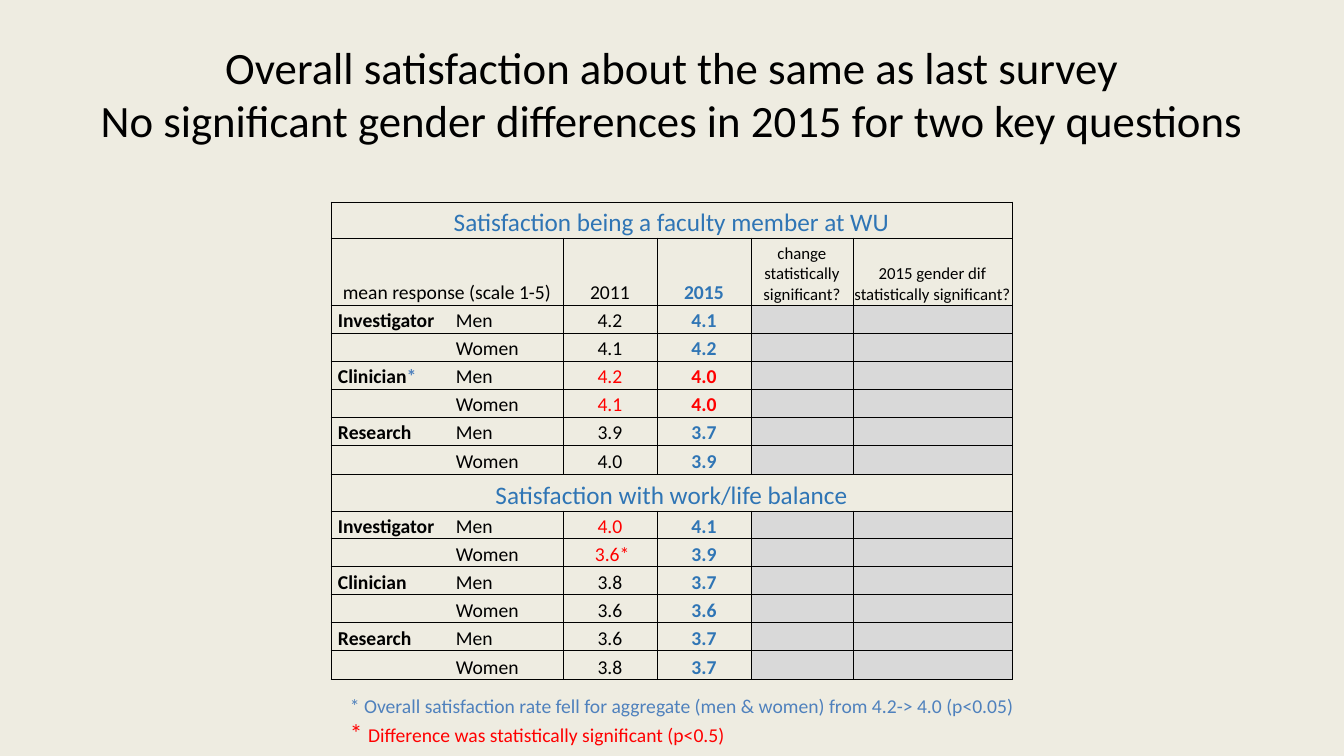
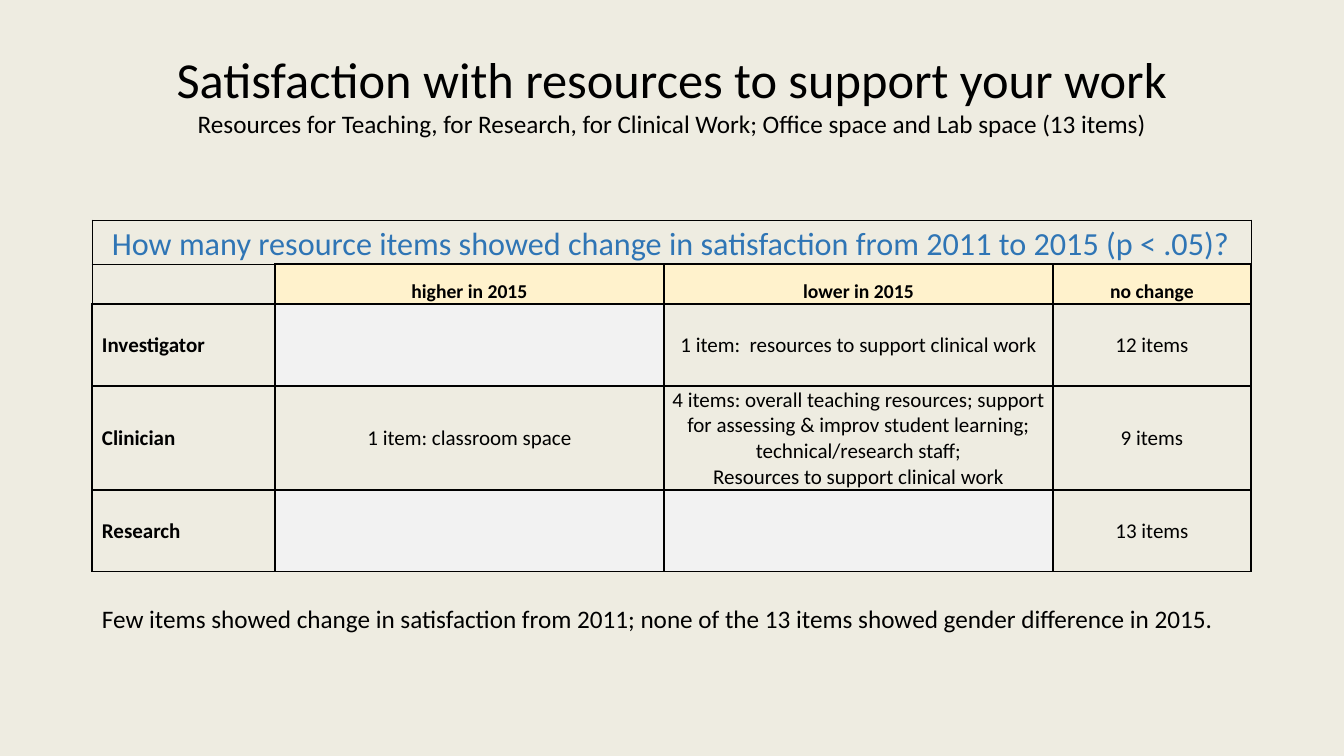
from dataclasses import dataclass

from lxml.etree import SubElement
from pptx import Presentation
from pptx.dml.color import RGBColor
from pptx.enum.text import MSO_ANCHOR as Anchor, MSO_AUTO_SIZE as AutoSize, PP_ALIGN as Align
from pptx.oxml.ns import qn
from pptx.util import Emu, Pt


@dataclass(frozen=True)
class Theme:
    font: str = "Calibri"
    background: str = "EEECE1"
    black: str = "000000"
    blue: str = "2F75B5"
    note_blue: str = "4F81BD"
    red: str = "FF0000"
    grey: str = "D9D9D9"
    light_grey: str = "F2F2F2"
    cream: str = "FFF2CC"
    title: int = 36
    long_title: int = 32
    question: int = 23
    large: int = 18
    body: int = 15
    small: int = 14
    tiny: int = 12
    thin: float = 0.5
    line: float = 1


theme = Theme()
PX = 914400 / 100.8
NO_STYLE_NO_GRID = "{2D5ABB26-0587-4C30-8999-92F81FD0307C}"


@dataclass
class Run:
    text: str
    size: int = theme.small
    color: str = theme.black
    bold: bool = False


@dataclass
class Cell:
    """A table cell; each paragraph is a list of runs, sides are drawn borders."""
    paragraphs: list
    align: Align = Align.CENTER
    anchor: Anchor = Anchor.BOTTOM
    fill: str = ""
    span: int = 1
    left: int = 1
    sides: str = "LRTB"
    line: float = theme.thin


def px(*lengths):
    return [Emu(round(length * PX)) for length in lengths]


def write_text(frame, paragraphs, align=Align.LEFT):
    for index, runs in enumerate(paragraphs):
        paragraph = frame.add_paragraph() if index else frame.paragraphs[0]
        paragraph.alignment = align
        for part in runs:
            run = paragraph.add_run()
            run.text = part.text
            run.font.name = theme.font
            run.font.size = Pt(part.size)
            run.font.bold = part.bold
            run.font.color.rgb = RGBColor.from_string(part.color)
        if not runs:
            SubElement(paragraph._p, qn("a:endParaRPr"), sz=str(theme.small * 100))


# Faculty satisfaction table
header = [
    Cell([[Run("mean response (scale 1-5)")]], span=2),
    Cell([[Run("2011")]]),
    Cell([[Run("2015", color=theme.blue, bold=True)]]),
    Cell([[Run("change statistically significant?", theme.tiny)]]),
    Cell([[Run("2015 gender dif statistically significant?", theme.tiny)]]),
]
# Track, its marker, colours of 2011 and 2015, then (2011, 2015) for men and women
sections = [
    ("Satisfaction being a faculty member at WU", [
        ("Investigator", "", theme.black, theme.blue, ("4.2", "4.1"), ("4.1", "4.2")),
        ("Clinician", "*", theme.red, theme.red, ("4.2", "4.0"), ("4.1", "4.0")),
        ("Research", "", theme.black, theme.blue, ("3.9", "3.7"), ("4.0", "3.9")),
    ]),
    ("Satisfaction with work/life balance", [
        ("Investigator", "", theme.red, theme.blue, ("4.0", "4.1"), (" 3.6*", "3.9")),
        ("Clinician", "", theme.black, theme.blue, ("3.8", "3.7"), ("3.6", "3.6")),
        ("Research", "", theme.black, theme.blue, ("3.6", "3.7"), ("3.8", "3.7")),
    ]),
]
satisfaction_rows = []
for heading, tracks in sections:
    satisfaction_rows.append([Cell([[Run(heading, theme.large, theme.blue)]], span=6)])
    if len(satisfaction_rows) == 1:
        satisfaction_rows.append(header)
    for track, marker, old_color, new_color, men, women in tracks:
        name = [Run(track, bold=True)]
        if marker:
            name.append(Run(marker, color=theme.note_blue, bold=True))
        for gender, edge, label, (old, new) in (("Men", "T", name, men), ("Women", "B", [], women)):
            sides = "LR" + edge
            satisfaction_rows.append([
                Cell([label], Align.LEFT, left=7, sides="L" + edge),
                Cell([[Run(gender)]], Align.LEFT, sides="R" + edge),
                Cell([[Run(old, color=old_color)]], sides=sides),
                Cell([[Run(new, color=new_color, bold=True)]], sides=sides),
                Cell([[]], fill=theme.grey, sides=sides),
                Cell([[]], fill=theme.grey, sides=sides),
            ])

# Resource table
resource_rows = [
    [Cell([[Run("How many resource items showed change in satisfaction from 2011 to 2015 (p < .05)?",
                theme.question, theme.blue)]], span=4)],
    [Cell([[]])] + [Cell([[Run(text, bold=True)]], fill=theme.cream, line=theme.line)
                    for text in ("higher in 2015", "lower in 2015", "no change")],
]
for track, *answers in [
    ("Investigator", [], ["1 item:  resources to support clinical work"], ["12 items"]),
    ("Clinician", ["1 item: classroom space"],
     ["4 items: overall teaching resources; support for assessing & improv student learning; "
      "technical/research staff;", "Resources to support clinical work"], ["9 items"]),
    ("Research", [], [], ["13 items"]),
]:
    row = [Cell([[Run(track, theme.body, bold=True)]], Align.LEFT, Anchor.MIDDLE,
                left=10, line=theme.line)]
    for answer in answers:
        row.append(Cell([[Run(text, theme.body)] for text in answer] or [[]], anchor=Anchor.MIDDLE,
                        fill="" if answer else theme.light_grey, line=theme.line))
    resource_rows.append(row)

track_heights = [28] * 5 + [29]
pages = [
    dict(
        title=[[Run("Overall satisfaction about the same as last survey", theme.long_title)],
               [Run("No significant gender differences in 2015 for two key questions", theme.long_title)]],
        origin=(331, 202),
        widths=[124, 108, 94, 94, 102, 159],
        heights=[36, 67, *track_heights, 37, *track_heights],
        rows=satisfaction_rows,
        note_box=(340, 689, 721, 65),
        note=[[Run("* Overall satisfaction rate fell for aggregate (men & women) from 4.2-> 4.0 (p<0.05)",
                   color=theme.note_blue)],
              [Run("* ", theme.large, theme.red),
               Run("Difference was statistically significant (p<0.5)", color=theme.red)]],
    ),
    dict(
        title=[[Run("Satisfaction with resources to support your work", theme.title)],
               [Run("Resources for Teaching, for Research, for Clinical Work; "
                    "Office space and Lab space (13 items)", theme.large)]],
        origin=(92, 220),
        widths=[183, 389, 389, 198],
        heights=[44, 40, 82, 104, 82],
        rows=resource_rows,
        note_box=(92, 598, 1159, 40),
        note=[[Run("Few items showed change in satisfaction from 2011; "
                   "none of the 13 items showed gender difference in 2015.", theme.large)]],
    ),
]

presentation = Presentation()
presentation.slide_width, presentation.slide_height = px(1344, 756)
background = presentation.slide_master.background.fill
background.solid()
background.fore_color.rgb = RGBColor.from_string(theme.background)

for page in pages:
    slide = presentation.slides.add_slide(presentation.slide_layouts[5])
    title = slide.shapes.title
    title.left, title.top, title.width, title.height = px(67, 30, 1210, 126)
    title.text_frame.auto_size = AutoSize.NONE
    title.text_frame.vertical_anchor = Anchor.MIDDLE
    write_text(title.text_frame, page["title"], Align.CENTER)

    widths, heights = page["widths"], page["heights"]
    table = slide.shapes.add_table(len(heights), len(widths),
                                   *px(*page["origin"], sum(widths), sum(heights))).table
    table.first_row = table.horz_banding = False
    table._tbl.tblPr.find(qn("a:tableStyleId")).text = NO_STYLE_NO_GRID
    for column, width in zip(table.columns, px(*widths)):
        column.width = width
    for table_row, height in zip(table.rows, px(*heights)):
        table_row.height = height

    for row_index, row in enumerate(page["rows"]):
        first = 0
        for content in row:
            covered = [table.cell(row_index, first + step) for step in range(content.span)]
            for cell in covered:
                cell.margin_left, cell.margin_right, cell.margin_top, cell.margin_bottom = px(
                    content.left, 1, 1, 0)
                cell.vertical_anchor = content.anchor
                for side in "LRTB":
                    if side in content.sides:
                        border = SubElement(cell._tc.get_or_add_tcPr(), qn("a:ln" + side),
                                            w=str(Pt(content.line)))
                        solid = SubElement(border, qn("a:solidFill"))
                        SubElement(solid, qn("a:srgbClr"), val=theme.black)
                if content.fill:
                    cell.fill.solid()
                    cell.fill.fore_color.rgb = RGBColor.from_string(content.fill)
                else:
                    cell.fill.background()
            if content.span > 1:
                covered[0].merge(covered[-1])
            write_text(covered[0].text_frame, content.paragraphs, content.align)
            first += content.span

    note = slide.shapes.add_textbox(*px(*page["note_box"]))
    note.text_frame.word_wrap = True
    note.text_frame.auto_size = AutoSize.SHAPE_TO_FIT_TEXT
    write_text(note.text_frame, page["note"])

presentation.save("out.pptx")
